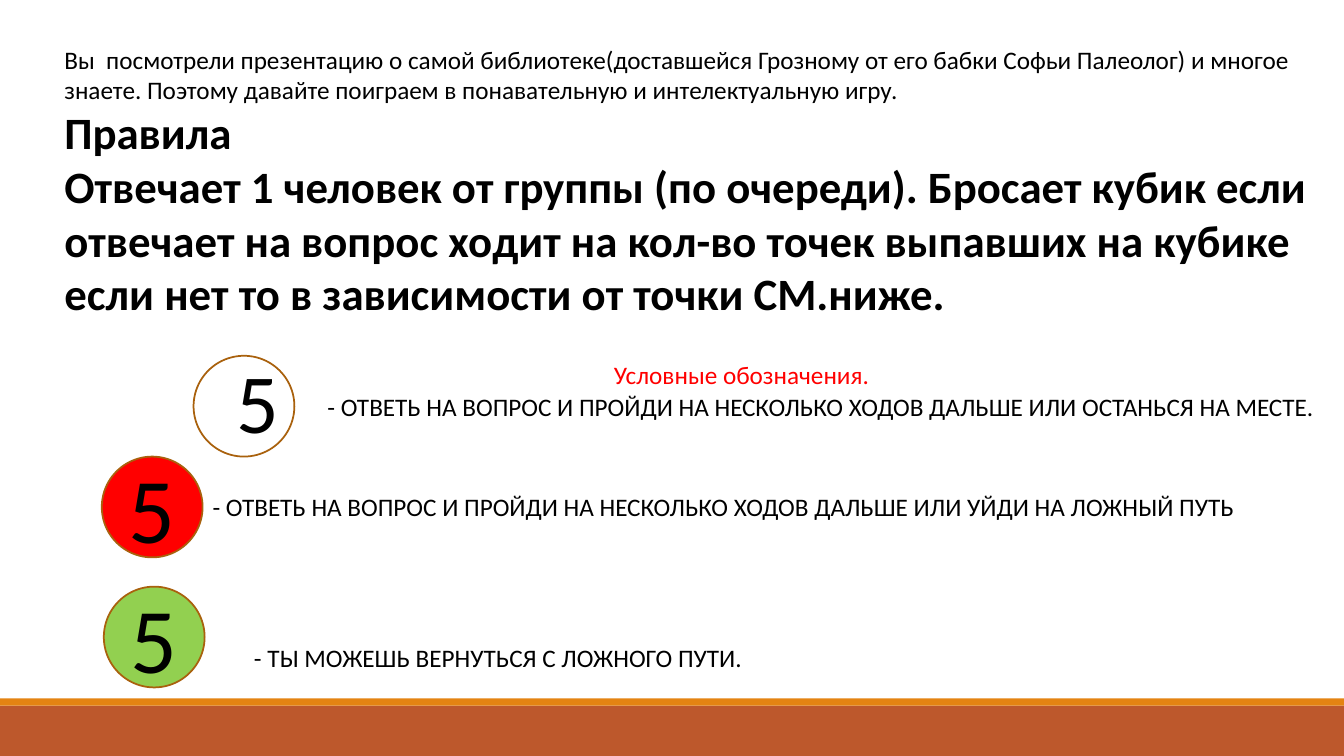
from dataclasses import dataclass

from pptx import Presentation
from pptx.dml.color import RGBColor
from pptx.enum.shapes import MSO_SHAPE
from pptx.enum.text import MSO_ANCHOR, PP_ALIGN
from pptx.util import Emu, Pt

RECT = MSO_SHAPE.RECTANGLE
OVAL = MSO_SHAPE.OVAL
MIDDLE = MSO_ANCHOR.MIDDLE
CENTER = PP_ALIGN.CENTER

BLACK = RGBColor(0x00, 0x00, 0x00)
RED = RGBColor(0xFF, 0x00, 0x00)
GREEN = RGBColor(0x92, 0xD0, 0x50)
BROWN = RGBColor(0xA9, 0x61, 0x0D)
RUST = RGBColor(0xBD, 0x58, 0x2C)
ORANGE = RGBColor(0xE4, 0x83, 0x12)

FONT = "Calibri"
SCALE = 9144
WIDTH, HEIGHT = 1333, 750
DISC = 100


@dataclass(frozen=True)
class Box:
    left: int
    top: int
    width: int
    height: int

    def emu(self) -> tuple[Emu, ...]:
        sides = (self.left, self.top, self.width, self.height)
        return tuple(Emu(side * SCALE) for side in sides)


@dataclass(frozen=True)
class Line:
    text: str
    size: int = 18
    bold: bool = False
    color: RGBColor = BLACK


@dataclass(frozen=True)
class Label:
    box: Box
    lines: tuple[Line, ...]
    wrap: bool = False


@dataclass(frozen=True)
class Disc:
    left: int
    top: int
    fill: RGBColor | None = None
    text: str = ""


@dataclass(frozen=True)
class Band:
    box: Box
    fill: RGBColor


BANDS = (
    Band(Box(0, 700, WIDTH, 50), RUST),
    Band(Box(0, 693, WIDTH, 7), ORANGE),
)

DISCS = (
    Disc(192, 353),
    Disc(101, 453, RED, "5"),
    Disc(103, 582, GREEN, "5"),
)

LABELS = (
    Label(Box(54, 39, 1275, 286), (
        Line("Вы  посмотрели презентацию о самой библиотеке(доставшейся Грозному "
             "от его бабки Софьи Палеолог) и многое знаете. Поэтому давайте "
             "поиграем в понавательную и интелектуальную игру."),
        Line("Правила", 32, True),
        Line("Отвечает 1 человек от группы (по очереди). Бросает кубик если "
             "отвечает на вопрос ходит на кол-во точек выпавших на кубике "
             "если нет то в зависимости от точки СМ.ниже.", 32, True),
    ), True),
    Label(Box(599, 352, 276, 40), (Line("Условные обозначения.", color=RED),)),
    Label(Box(225, 342, 43, 111), (Line("5", 60),)),
    Label(Box(315, 383, 1014, 40), (
        Line("- ОТВЕТЬ НА ВОПРОС И ПРОЙДИ НА НЕСКОЛЬКО ХОДОВ ДАЛЬШЕ "
             "ИЛИ ОСТАНЬСЯ НА МЕСТЕ."),
    )),
    Label(Box(201, 483, 1044, 40), (
        Line("- ОТВЕТЬ НА ВОПРОС И ПРОЙДИ НА НЕСКОЛЬКО ХОДОВ ДАЛЬШЕ "
             "ИЛИ УЙДИ НА ЛОЖНЫЙ ПУТЬ"),
    )),
    Label(Box(242, 632, 509, 40), (Line("- ТЫ МОЖЕШЬ ВЕРНУТЬСЯ С ЛОЖНОГО ПУТИ."),)),
)


def write(para, line: Line) -> None:
    para.text = line.text
    para.font.name = FONT
    para.font.size = Pt(line.size)
    para.font.bold = line.bold
    para.font.color.rgb = line.color


def draw_band(slide, band: Band) -> None:
    shape = slide.shapes.add_shape(RECT, *band.box.emu())
    shape.shadow.inherit = False
    shape.fill.solid()
    shape.fill.fore_color.rgb = band.fill
    shape.line.fill.background()


def draw_disc(slide, disc: Disc) -> None:
    box = Box(disc.left, disc.top, DISC, DISC)
    shape = slide.shapes.add_shape(OVAL, *box.emu())
    shape.shadow.inherit = False
    shape.line.color.rgb = BROWN
    shape.line.width = Pt(1.25)
    if disc.fill is None:
        shape.fill.background()
    else:
        shape.fill.solid()
        shape.fill.fore_color.rgb = disc.fill
    if disc.text:
        frame = shape.text_frame
        frame.vertical_anchor = MIDDLE
        para = frame.paragraphs[0]
        para.alignment = CENTER
        write(para, Line(disc.text, 66))


def draw_label(slide, label: Label) -> None:
    frame = slide.shapes.add_textbox(*label.box.emu()).text_frame
    frame.word_wrap = label.wrap
    for index, line in enumerate(label.lines):
        para = frame.add_paragraph() if index else frame.paragraphs[0]
        write(para, line)


def main() -> None:
    deck = Presentation()
    deck.slide_width = Emu(WIDTH * SCALE)
    deck.slide_height = Emu(HEIGHT * SCALE)
    slide = deck.slides.add_slide(deck.slide_layouts[6])
    for band in BANDS:
        draw_band(slide, band)
    for disc in DISCS:
        draw_disc(slide, disc)
    for label in LABELS:
        draw_label(slide, label)
    deck.save("out.pptx")


if __name__ == "__main__":
    main()
